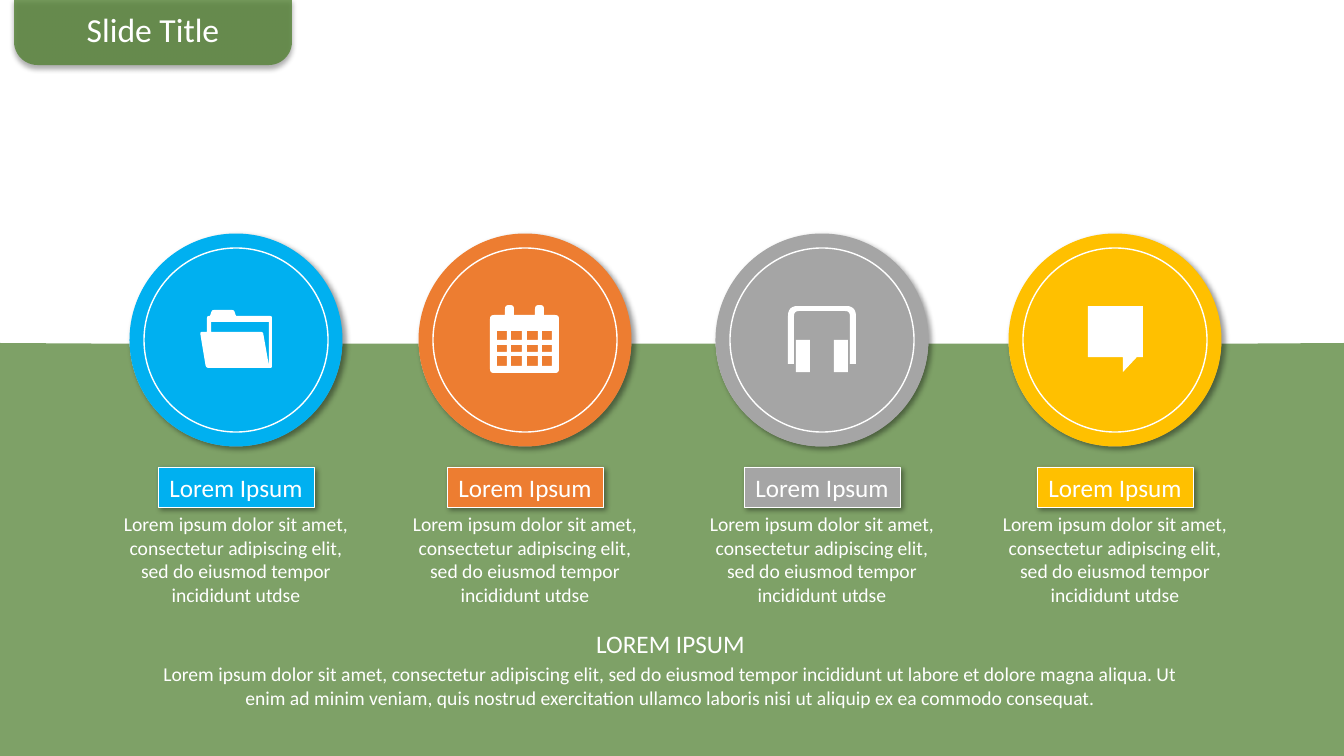
from math import cos, radians, sin

from lxml.etree import SubElement
from pptx import Presentation
from pptx.dml.color import RGBColor
from pptx.enum.shapes import MSO_SHAPE as Preset
from pptx.enum.text import MSO_ANCHOR as Anchor, MSO_AUTO_SIZE as AutoSize, PP_ALIGN as Align
from pptx.oxml.ns import qn
from pptx.util import Emu, Pt

TITLE = "Slide Title"
LABEL = "Lorem Ipsum"
BLURB = "Lorem ipsum dolor sit amet, consectetur adipiscing elit, sed do eiusmod tempor incididunt utdse"
FOOTER_HEAD = "LOREM IPSUM"
FOOTER = (
    "Lorem ipsum dolor sit amet, consectetur adipiscing elit, sed do eiusmod tempor incididunt ut labore "
    "et dolore magna aliqua. Ut enim ad minim veniam, quis nostrud exercitation ullamco laboris nisi ut "
    "aliquip ex ea commodo consequat."
)
WHITE, GREEN = "FFFFFF", "548235"


def rectangle(left, top, right, bottom):
    return [(left, top, 0), (left, bottom, 0), (right, bottom, 0), (right, top, 0)]


FOLDER = [
    [(272, 368, 2), (206, 368, 3), (200, 332, 2), (207, 332, 0), (207, 316, 2), (210, 316, 1),
     (212, 310, 2), (234, 310, 2), (236, 316, 1), (272, 316, 2)],
    [(269, 366, 0), (269, 322, 0), (211, 322, 0), (211, 332, 0), (263, 332, 2)],
]
CALENDAR_COLUMNS = [(497, 507), (511, 522), (527, 538), (542, 552)]
CALENDAR_ROWS = [(331, 340), (345, 352), (356, 366)]
CALENDAR = [
    [(490, 315, 4), (505, 315, 0), (505, 305, 4), (514, 305, 4), (514, 315, 0), (535, 315, 0),
     (535, 305, 4), (544, 305, 4), (544, 315, 0), (559, 315, 4), (559, 373, 4), (490, 373, 4)],
] + [
    rectangle(left, top, right, bottom)
    for top, bottom in CALENDAR_ROWS
    for left, right in CALENDAR_COLUMNS
]
HEADPHONES = [
    [(788, 364, 0), (788, 306, 10), (856, 306, 10), (856, 364, 0),
     (850, 364, 0), (850, 311, 5), (794, 311, 5), (794, 364, 0)],
    rectangle(796, 340, 810, 372),
    rectangle(834, 340, 848, 372),
]
BUBBLE = [
    [(1088, 357, 0), (1123, 357, 0), (1123, 372, 0), (1137, 357, 0),
     (1143, 357, 0), (1143, 306, 0), (1088, 306, 0)],
]
COLUMNS = [
    (236, "00B0F0", FOLDER),
    (525, "ED7D31", CALENDAR),
    (822, "A5A5A5", HEADPHONES),
    (1115, "FFC000", BUBBLE),
]
PAGE_WIDTH, PAGE_HEIGHT = 1344, 756
CIRCLE_MIDDLE, CIRCLE, RING = 340, 213, 184
PANEL_TOP = 343


def px(length):
    return Emu(round(length * 914400 / 100.8))


def color(value):
    return RGBColor.from_string(value)


def paint(shape, fill=None, alpha=None, line=None, line_width=1, shadow=None):
    shape.shadow.inherit = False
    if fill:
        shape.fill.solid()
        shape.fill.fore_color.rgb = color(fill)
    else:
        shape.fill.background()
    if alpha:
        tint = shape.element.spPr.find(qn("a:solidFill"))[0]
        SubElement(tint, qn("a:alpha"), val=str(alpha * 1000))
    if line:
        shape.line.color.rgb = color(line)
        shape.line.width = Pt(line_width)
    else:
        shape.line.fill.background()
    if shadow is not None:
        effects = shape.element.spPr.find(qn("a:effectLst"))
        outer = SubElement(effects, qn("a:outerShdw"), blurRad=str(Pt(4)), dist=str(Pt(3)),
                           dir=str(shadow * 60000), algn="ctr", rotWithShape="0")
        black = SubElement(outer, qn("a:srgbClr"), val="000000")
        SubElement(black, qn("a:alpha"), val="40000")


def add_preset(kind, left, top, width, height, **look):
    shape = page.shapes.add_shape(kind, px(left), px(top), px(width), px(height))
    paint(shape, **look)
    return shape


def add_disc(center, size, **look):
    add_preset(Preset.OVAL, center - size / 2, CIRCLE_MIDDLE - size / 2, size, size, **look)


def add_outline(contours, **look):
    contours = [[(px(x), px(y)) for x, y in contour] for contour in contours]
    builder = page.shapes.build_freeform(*contours[0][0])
    for index, contour in enumerate(contours):
        if index:
            builder.move_to(*contour[0])
        builder.add_line_segments(contour[1:], close=True)
    paint(builder.convert_to_shape(), **look)


def toward(start, end, distance):
    dx, dy = end[0] - start[0], end[1] - start[1]
    share = distance / (dx * dx + dy * dy) ** 0.5
    return start[0] + dx * share, start[1] + dy * share


def soften(corners):
    points = []
    for index, corner in enumerate(corners):
        x, y, radius = corner
        if not radius:
            points.append((x, y))
            continue
        before = toward(corner, corners[index - 1], radius)
        after = toward(corner, corners[(index + 1) % len(corners)], radius)
        for step in range(7):
            t = step / 6
            weights = (1 - t) ** 2, 2 * t * (1 - t), t * t
            points.append(tuple(
                sum(weight * value for weight, value in zip(weights, axis))
                for axis in zip(before, (x, y), after)
            ))
    return points


def write(box, *lines, wrap=True, inset=None, anchor=Anchor.TOP):
    frame = box.text_frame
    frame.word_wrap = wrap
    frame.auto_size = AutoSize.SHAPE_TO_FIT_TEXT
    frame.vertical_anchor = anchor
    if inset:
        frame.margin_left = frame.margin_right = px(inset[0])
        frame.margin_top = frame.margin_bottom = px(inset[1])
    for index, (text, size) in enumerate(lines):
        para = frame.add_paragraph() if index else frame.paragraphs[0]
        para.alignment = Align.CENTER
        if index:
            para.space_before = Pt(3)
        span = para.add_run()
        span.text = text
        span.font.name = "Calibri"
        span.font.size = Pt(size)
        span.font.color.rgb = color(WHITE)


def add_text(left, top, width, height, *lines, **layout):
    box = page.shapes.add_textbox(px(left), px(top), px(width), px(height))
    write(box, *lines, **layout)


deck = Presentation()
deck.slide_width, deck.slide_height = px(PAGE_WIDTH), px(PAGE_HEIGHT)
page = deck.slides.add_slide(deck.slide_layouts[5])

panel = [(0, PANEL_TOP)]
for center, _, _ in COLUMNS:
    panel += [
        (center - CIRCLE / 2 * cos(radians(angle)), CIRCLE_MIDDLE + CIRCLE / 2 * sin(radians(angle)))
        for angle in range(2, 180, 4)
    ]
panel += [(PAGE_WIDTH, PANEL_TOP), (PAGE_WIDTH, PAGE_HEIGHT), (0, PAGE_HEIGHT)]
add_outline([panel], fill=GREEN, alpha=75)

for center, tone, icon in COLUMNS:
    add_disc(center, CIRCLE, fill=tone, shadow=45)
    add_disc(center, RING, line=WHITE)
    add_outline([soften(contour) for contour in icon], fill=WHITE)
    label = add_preset(Preset.RECTANGLE, center - 78, 467, 156, 40,
                       fill=tone, line=WHITE, line_width=0.5, shadow=45)
    write(label, (LABEL, 18), wrap=False, anchor=Anchor.MIDDLE)
    add_text(center - 123, 509, 246, 102, (BLURB, 14), inset=(7, 3))

tab = add_preset(Preset.ROUND_2_SAME_RECTANGLE, 14, -2, 278, 67, fill=GREEN, alpha=80, shadow=90)
tab.rotation = 180
tab.adjustments[0], tab.adjustments[1] = 0.35, 0

title = page.shapes.title
title.left, title.top, title.width, title.height = px(14), px(4), px(278), px(50)
write(title, (TITLE, 24))
page.shapes.element.append(title.element)

add_text(153, 623, 1035, 97, (FOOTER_HEAD, 18), (FOOTER, 14))

deck.save("out.pptx")
